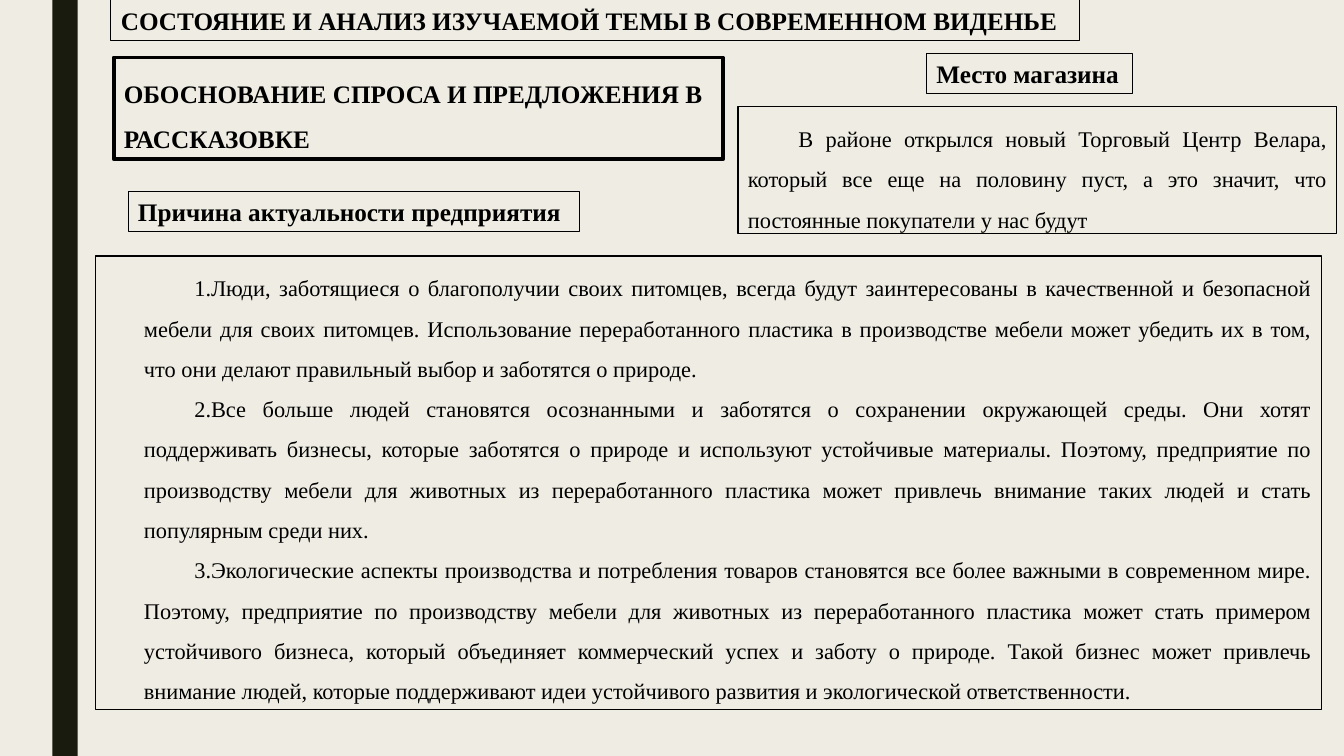
"""Builds a slide on why a recycled-plastic pet furniture business is relevant."""
from dataclasses import dataclass

from lxml import etree
from pptx import Presentation
from pptx.dml.color import RGBColor
from pptx.enum.shapes import MSO_SHAPE
from pptx.enum.text import MSO_ANCHOR, MSO_AUTO_SIZE, PP_ALIGN
from pptx.oxml.ns import qn
from pptx.util import Inches, Pt

RECTANGLE = MSO_SHAPE.RECTANGLE
TOP, MIDDLE = MSO_ANCHOR.TOP, MSO_ANCHOR.MIDDLE
LEFT, JUSTIFY = PP_ALIGN.LEFT, PP_ALIGN.JUSTIFY
GROW, FIXED = MSO_AUTO_SIZE.SHAPE_TO_FIT_TEXT, MSO_AUTO_SIZE.NONE

CREAM = RGBColor(0xEF, 0xED, 0xE3)
DARK_OLIVE = RGBColor(0x19, 0x1B, 0x0E)
BLACK = RGBColor(0, 0, 0)

FONT = "Times New Roman"
SLIDE_WIDTH, SLIDE_HEIGHT = Inches(13.33), Inches(7.5)
COLUMN = SLIDE_WIDTH / 133.3
ROW = SLIDE_HEIGHT / 75
FIRST_LINE = 5


@dataclass(frozen=True)
class Area:
    """A rectangle in grid columns and rows."""
    left: float
    top: float
    width: float
    height: float

    def lengths(self) -> tuple[int, int, int, int]:
        """Return left, top, width and height in slide units."""
        return (round(self.left * COLUMN), round(self.top * ROW),
                round(self.width * COLUMN), round(self.height * ROW))


@dataclass(frozen=True)
class Box:
    """An outlined text box."""
    area: Area
    paragraphs: tuple[str, ...]
    size: int = 18
    bold: bool = True
    border: float = 0.75
    spacing: float = 1.0
    align: PP_ALIGN = LEFT
    anchor: MSO_ANCHOR = TOP
    fit: MSO_AUTO_SIZE = GROW
    margin: float = 0
    first_line: float = 0
    numbered: bool = False


STRIPE = Area(5.2, 0, 2.5, 75)

BOXES = (
    Box(Area(11, 0, 96.1, 4),
        ("СОСТОЯНИЕ И АНАЛИЗ ИЗУЧАЕМОЙ ТЕМЫ В СОВРЕМЕННОМ ВИДЕНЬЕ",)),
    Box(Area(11.3, 5.7, 60.4, 10.1),
        ("ОБОСНОВАНИЕ СПРОСА И ПРЕДЛОЖЕНИЯ В РАССКАЗОВКЕ",),
        border=2.75, spacing=1.5, anchor=MIDDLE, fit=FIXED),
    Box(Area(91.9, 5.3, 20.4, 4), ("Место магазина",)),
    Box(Area(73.2, 10.6, 59.4, 12.6),
        ("В районе открылся новый Торговый Центр Велара, который все еще на "
         "половину пуст, а это значит, что постоянные покупатели у нас будут",),
        size=16, bold=False, spacing=1.5, align=JUSTIFY, first_line=FIRST_LINE),
    Box(Area(12.7, 19, 44.8, 4), ("Причина актуальности предприятия",)),
    Box(Area(9.5, 25.4, 121.6, 45),
        ("Люди, заботящиеся о благополучии своих питомцев, всегда будут "
         "заинтересованы в качественной и безопасной мебели для своих питомцев. "
         "Использование переработанного пластика в производстве мебели может "
         "убедить их в том, что они делают правильный выбор и заботятся о природе.",
         "Все больше людей становятся осознанными и заботятся о сохранении "
         "окружающей среды. Они хотят поддерживать бизнесы, которые заботятся о "
         "природе и используют устойчивые материалы. Поэтому, предприятие по "
         "производству мебели для животных из переработанного пластика может "
         "привлечь внимание таких людей и стать популярным среди них.",
         "Экологические аспекты производства и потребления товаров становятся все "
         "более важными в современном мире. Поэтому, предприятие по производству "
         "мебели для животных из переработанного пластика может стать примером "
         "устойчивого бизнеса, который объединяет коммерческий успех и заботу о "
         "природе. Такой бизнес может привлечь внимание людей, которые "
         "поддерживают идеи устойчивого развития и экологической ответственности."),
        size=16, bold=False, spacing=1.5, align=JUSTIFY,
        margin=3.8, first_line=FIRST_LINE, numbered=True),
)


def add_stripe(slide, area: Area) -> None:
    """Draw the dark vertical stripe."""
    stripe = slide.shapes.add_shape(RECTANGLE, *area.lengths())
    stripe.shadow.inherit = False
    stripe.fill.solid()
    stripe.fill.fore_color.rgb = DARK_OLIVE
    stripe.line.fill.background()


def format_paragraph(paragraph, box: Box) -> None:
    """Apply the spacing, indents, numbering and font of a box."""
    paragraph.alignment = box.align
    paragraph.line_spacing = box.spacing
    properties = paragraph._p.get_or_add_pPr()
    properties.set("marL", str(round(box.margin * COLUMN)))
    properties.set("indent", str(round(box.first_line * COLUMN)))
    if box.numbered:
        etree.SubElement(properties, qn("a:buFont"), typeface="+mj-lt")
        etree.SubElement(properties, qn("a:buAutoNum"), type="arabicPeriod")
    font = paragraph.font
    font.name = FONT
    font.size = Pt(box.size)
    font.bold = box.bold
    font.color.rgb = BLACK


def add_box(slide, box: Box) -> None:
    """Draw one outlined text box."""
    shape = slide.shapes.add_textbox(*box.area.lengths())
    shape.line.color.rgb = BLACK
    shape.line.width = Pt(box.border)
    frame = shape.text_frame
    frame.word_wrap = True
    frame.auto_size = box.fit
    frame.vertical_anchor = box.anchor
    frame.text = "\n".join(box.paragraphs)
    for paragraph in frame.paragraphs:
        format_paragraph(paragraph, box)


def main() -> None:
    """Build and save the presentation."""
    presentation = Presentation()
    presentation.slide_width = SLIDE_WIDTH
    presentation.slide_height = SLIDE_HEIGHT
    slide = presentation.slides.add_slide(presentation.slide_layouts[6])
    slide.background.fill.solid()
    slide.background.fill.fore_color.rgb = CREAM
    add_stripe(slide, STRIPE)
    for box in BOXES:
        add_box(slide, box)
    presentation.save("out.pptx")


if __name__ == "__main__":
    main()
